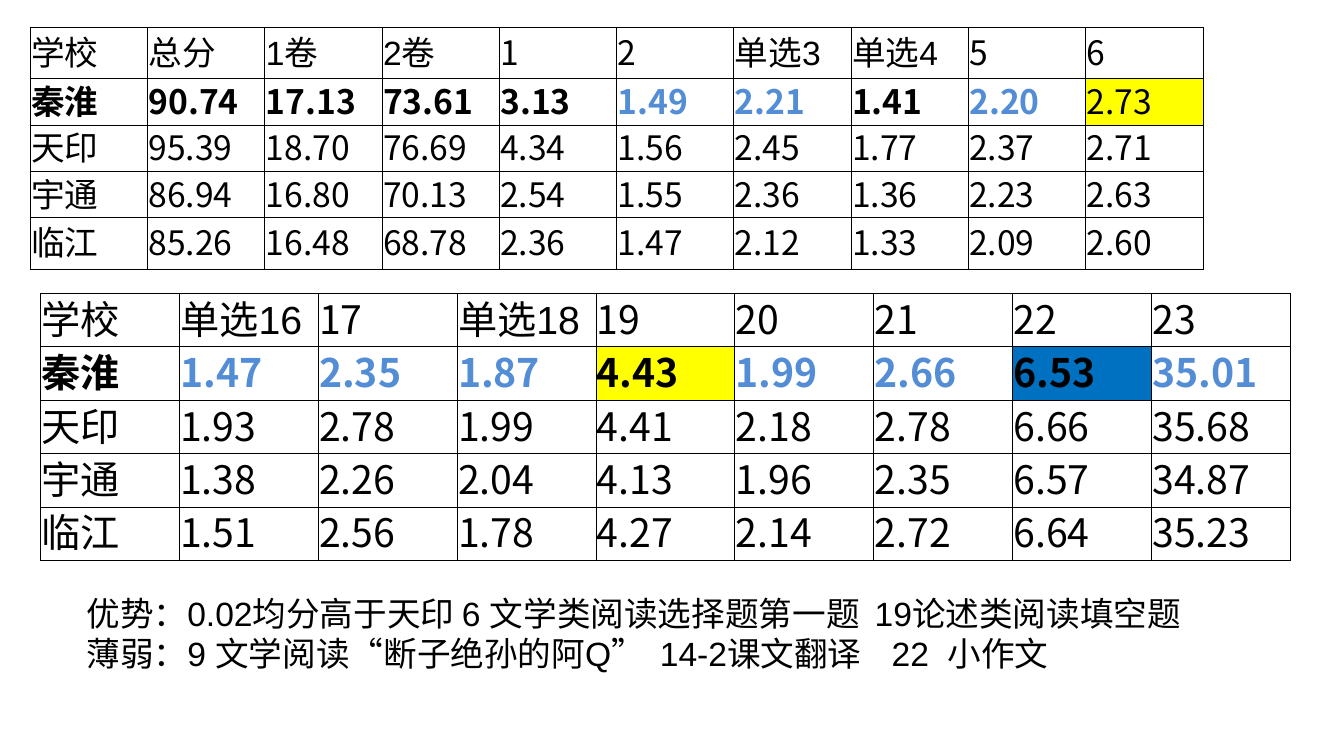
from lxml.etree import SubElement
from pptx import Presentation
from pptx.dml.color import RGBColor
from pptx.enum.text import MSO_ANCHOR, MSO_AUTO_SIZE
from pptx.oxml import parse_xml
from pptx.oxml.ns import nsdecls
from pptx.util import Emu, Pt

PX = 9144  # 100 px to the inch
BLACK = RGBColor(0x00, 0x00, 0x00)
SCORE_BLUE = RGBColor(0x53, 0x8D, 0xD5)
YELLOW = RGBColor(0xFF, 0xFF, 0x00)
FILL_BLUE = RGBColor(0x00, 0x70, 0xC0)
LABEL_FONT = "Arial"
NUMBER_FONT = "Noto Sans CJK SC"
LINE_RATIO = 1.2
OWN_SCHOOL_ROW = 1

FIRST_SCORES = [
    "学校 总分 1卷 2卷 1 2 单选3 单选4 5 6",
    "秦淮 90.74 17.13 73.61 3.13 1.49 2.21 1.41 2.20 2.73",
    "天印 95.39 18.70 76.69 4.34 1.56 2.45 1.77 2.37 2.71",
    "宇通 86.94 16.80 70.13 2.54 1.55 2.36 1.36 2.23 2.63",
    "临江 85.26 16.48 68.78 2.36 1.47 2.12 1.33 2.09 2.60",
]
SECOND_SCORES = [
    "学校 单选16 17 单选18 19 20 21 22 23",
    "秦淮 1.47 2.35 1.87 4.43 1.99 2.66 6.53 35.01",
    "天印 1.93 2.78 1.99 4.41 2.18 2.78 6.66 35.68",
    "宇通 1.38 2.26 2.04 4.13 1.96 2.35 6.57 34.87",
    "临江 1.51 2.56 1.78 4.27 2.14 2.72 6.64 35.23",
]
SUMMARY = [
    "优势：0.02均分高于天印 6 文学类阅读选择题第一题  19论述类阅读填空题",
    "薄弱：9 文学阅读“断子绝孙的阿Q”  14-2课文翻译    22  小作文",
]


def px(length):
    return Emu(round(length * PX))


def write_text(paragraph, text, size, font=LABEL_FONT, bold=False, color=BLACK):
    paragraph.line_spacing = Pt(size * LINE_RATIO)
    run = paragraph.add_run()
    run.text = text
    for name, value in {"size": Pt(size), "name": font, "bold": bold}.items():
        setattr(run.font, name, value)
    run.font.color.rgb = color


def add_borders(cell):
    properties = cell._tc.get_or_add_tcPr()
    for index, side in enumerate("LRTB"):
        line = parse_xml(f'<a:ln{side} {nsdecls("a")} w="6350"><a:solidFill>'
                         f'<a:srgbClr val="{BLACK}"/></a:solidFill></a:ln{side}>')
        properties.insert(index, line)


def format_cell(cell, fill_color):
    cell_format = {
        "vertical_anchor": MSO_ANCHOR.MIDDLE,
        "margin_left": px(1), "margin_right": px(1),
        "margin_top": px(5), "margin_bottom": px(1),
    }
    for name, value in cell_format.items():
        setattr(cell, name, value)
    if fill_color is None:
        cell.fill.background()
    else:
        cell.fill.solid()
        cell.fill.fore_color.rgb = fill_color
    add_borders(cell)


def add_score_table(slide, box, scores, row_heights, size, blue_columns, fills, plain_columns=()):
    """Blue, filled and plain columns apply to the row of the own school."""
    rows = [line.split() for line in scores]
    column_count = len(rows[0])
    frame = slide.shapes.add_table(len(rows), column_count, *map(px, box))
    table = frame.table
    table.first_row = table.horz_banding = False
    for column in table.columns:
        column.width = px(box[2] / column_count)
    for row, height in zip(table.rows, row_heights):
        row.height = px(height)
    for row_index, values in enumerate(rows):
        own = row_index == OWN_SCHOOL_ROW
        for column_index, value in enumerate(values):
            cell = table.cell(row_index, column_index)
            format_cell(cell, fills.get(column_index) if own else None)
            write_text(
                cell.text_frame.paragraphs[0], value, size,
                font=NUMBER_FONT if value.isascii() else LABEL_FONT,
                bold=own and column_index not in plain_columns,
                color=SCORE_BLUE if own and column_index in blue_columns else BLACK,
            )


def add_summary(slide, box):
    text_frame = slide.shapes.add_textbox(*map(px, box)).text_frame
    text_frame.word_wrap = True
    text_frame.auto_size = MSO_AUTO_SIZE.SHAPE_TO_FIT_TEXT
    for index, text in enumerate(SUMMARY):
        paragraph = text_frame.add_paragraph() if index else text_frame.paragraphs[0]
        write_text(paragraph, text, 24)


def main():
    presentation = Presentation()
    presentation.slide_width, presentation.slide_height = px(1333), px(750)
    slide = presentation.slides.add_slide(presentation.slide_layouts[6])
    add_score_table(slide, (30, 27, 1163, 241), FIRST_SCORES, [51, 46, 46, 46, 51], 24,
                    blue_columns={5, 6, 8}, fills={9: YELLOW}, plain_columns={9})
    add_score_table(slide, (40, 291, 1240, 265), SECOND_SCORES, [53] * 5, 28,
                    blue_columns={1, 2, 3, 5, 6, 8}, fills={4: YELLOW, 7: FILL_BLUE})
    add_summary(slide, (76, 583, 1204, 91))
    presentation.save("out.pptx")


if __name__ == "__main__":
    main()
